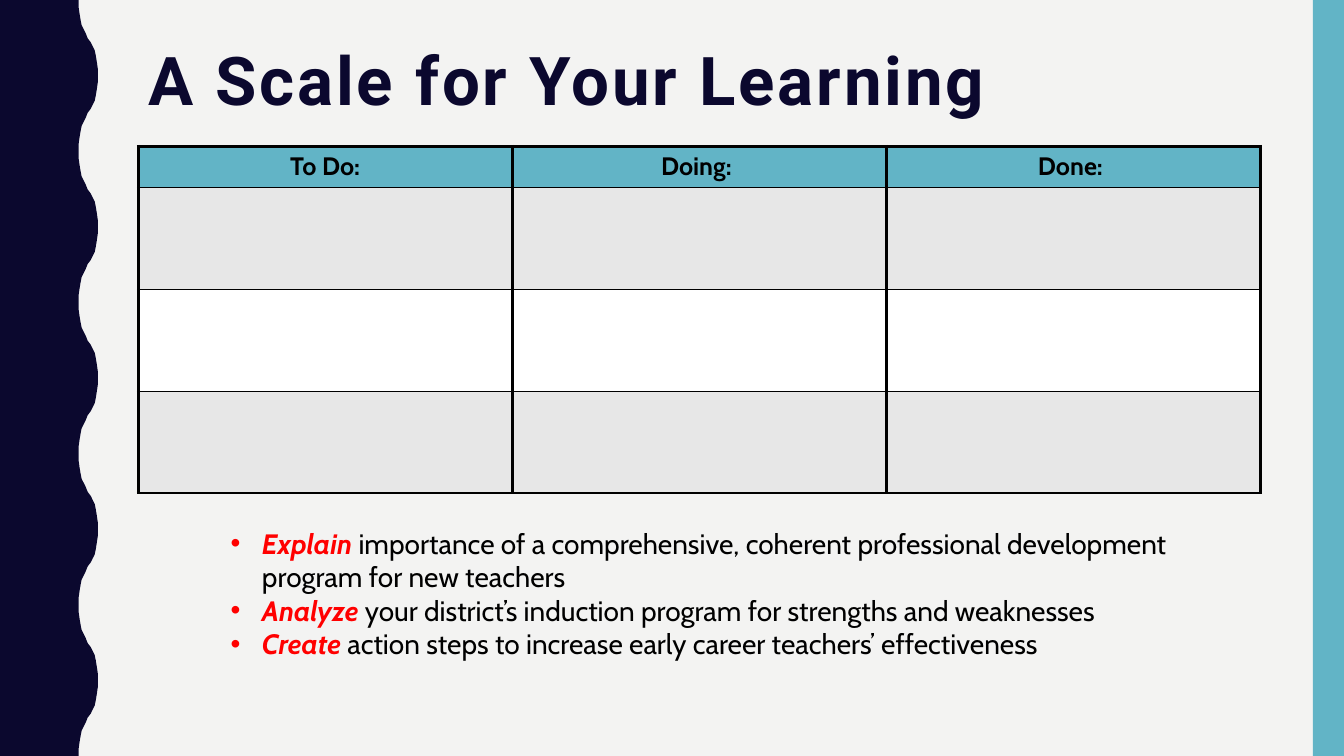
from lxml import etree
from pptx import Presentation
from pptx.dml.color import RGBColor
from pptx.enum.shapes import MSO_SHAPE
from pptx.enum.text import MSO_ANCHOR, PP_ALIGN
from pptx.oxml.ns import qn
from pptx.util import Inches, Pt

RECTANGLE = MSO_SHAPE.RECTANGLE
MIDDLE, TOP = MSO_ANCHOR.MIDDLE, MSO_ANCHOR.TOP
CENTER = PP_ALIGN.CENTER

SLIDE_W, SLIDE_H = 13.33, 7.5
LEFT, CONTENT_W = 1.37, 11.13
NAVY, TEAL, PAPER = "0B082E", "62B4C6", "F3F3F2"
BLACK, WHITE, GRAY, RED = "000000", "FFFFFF", "E7E7E7", "FF0000"

WAVES = 5
# First quarter of one wave as (x, y); the rest follows by symmetry.
WAVE_QUARTER = [(0.78, 0), (0.78, 0.07), (0.79, 0.14), (0.8, 0.2),
                (0.81, 0.25), (0.83, 0.29), (0.85, 0.33), (0.87, 0.38)]

HEADINGS = ["To Do:", "Doing: ", "Done: "]
HEADER_H, BODY_H = 0.41, 1.01
BODY_FILLS = [GRAY, WHITE, GRAY]
SIDE_LINE = 2.25
ROW_LINES = [2.25, 1, 0.25, 0.25, 2]

GOALS = [
    ("Explain ", "importance of a comprehensive, coherent professional "
                 "development program for new teachers"),
    ("Analyze ", "your district’s induction program for strengths and weaknesses"),
    ("Create ", "action steps to increase early career teachers’ effectiveness"),
]


def color(value):
    return RGBColor.from_string(value)


def paint(part, value):
    part.fill.solid()
    part.fill.fore_color.rgb = color(value)


def finish_shape(shape, value):
    """Flat fill without outline or shadow."""
    paint(shape, value)
    shape.line.fill.background()
    shape.shadow.inherit = False


def style_run(run, font_name, size, value, bold=False, italic=False):
    font = run.font
    font.name, font.size = font_name, Pt(size)
    font.bold, font.italic = bold, italic
    font.color.rgb = color(value)


def add_frame(slide, left, top, width, height):
    box = slide.shapes.add_textbox(*map(Inches, (left, top, width, height)))
    frame = box.text_frame
    frame.word_wrap = True
    frame.vertical_anchor = TOP
    return frame


def add_wavy_edge(slide):
    period = SLIDE_H / WAVES
    middle = 0.78 + 0.97
    half = WAVE_QUARTER + [(middle - x, period / 2 - y)
                           for x, y in reversed(WAVE_QUARTER[:-1])]
    wave = half + [(x, period - y) for x, y in reversed(half[:-1])]
    edge = [(x, y + i * period) for i in range(WAVES) for x, y in wave]
    outline = [(Inches(x), Inches(y)) for x, y in edge + [(0, SLIDE_H)]]
    builder = slide.shapes.build_freeform(0, 0)
    builder.add_line_segments(outline, close=True)
    finish_shape(builder.convert_to_shape(), NAVY)


def add_side_band(slide):
    width = 0.31
    band = slide.shapes.add_shape(RECTANGLE, Inches(SLIDE_W - width), 0,
                                  Inches(width), Inches(SLIDE_H))
    finish_shape(band, TEAL)


def add_title(slide, text):
    frame = add_frame(slide, LEFT, 0.42, CONTENT_W, 1)
    paragraph = frame.paragraphs[0]
    paragraph.text = text
    paragraph.line_spacing = 0.9
    run = paragraph.runs[0]
    style_run(run, "Roboto", 48, NAVY, bold=True)
    run.font._element.set("spc", "200")


def set_borders(cell, top, bottom):
    """Draw the cell's four sides; they must precede its fill in the XML."""
    properties = cell._tc.get_or_add_tcPr()
    sides = [("L", SIDE_LINE), ("R", SIDE_LINE), ("T", top), ("B", bottom)]
    for index, (side, width) in enumerate(sides):
        line = etree.Element(qn(f"a:ln{side}"), w=str(Pt(width)))
        fill = etree.SubElement(line, qn("a:solidFill"))
        etree.SubElement(fill, qn("a:srgbClr"), val=BLACK)
        properties.insert(index, line)


def add_scale_table(slide):
    heights = [HEADER_H] + [BODY_H] * len(BODY_FILLS)
    table = slide.shapes.add_table(
        len(heights), len(HEADINGS), Inches(LEFT), Inches(1.45),
        Inches(CONTENT_W), Inches(sum(heights))).table
    table.first_row = table.horz_banding = False
    for r, (height, fill) in enumerate(zip(heights, [TEAL] + BODY_FILLS)):
        table.rows[r].height = Inches(height)
        for cell in table.rows[r].cells:
            paint(cell, fill)
            set_borders(cell, ROW_LINES[r], ROW_LINES[r + 1])
    for cell, heading in zip(table.rows[0].cells, HEADINGS):
        cell.vertical_anchor = MIDDLE
        paragraph = cell.text_frame.paragraphs[0]
        paragraph.text = heading
        paragraph.alignment = CENTER
        style_run(paragraph.runs[0], "Cabin", 18, BLACK, bold=True)


def add_bullet(paragraph, value):
    properties = paragraph._p.get_or_add_pPr()
    indent = Inches(0.31)
    properties.set("marL", str(indent))
    properties.set("indent", str(-indent))
    bullet_color = etree.SubElement(properties, qn("a:buClr"))
    etree.SubElement(bullet_color, qn("a:srgbClr"), val=value)
    etree.SubElement(properties, qn("a:buFont"), typeface="Arial")
    etree.SubElement(properties, qn("a:buChar"), char="•")


def add_goals(slide):
    frame = add_frame(slide, 2.19, 5.17, 9.49, 1.45)
    for i, (verb, goal) in enumerate(GOALS):
        paragraph = frame.add_paragraph() if i else frame.paragraphs[0]
        add_bullet(paragraph, RED)
        paragraph.text = verb
        style_run(paragraph.runs[0], "Cabin", 20, RED, bold=True, italic=True)
        goal_run = paragraph.add_run()
        goal_run.text = goal
        style_run(goal_run, "Cabin", 20, BLACK)


def main():
    deck = Presentation()
    deck.slide_width, deck.slide_height = Inches(SLIDE_W), Inches(SLIDE_H)
    slide = deck.slides.add_slide(deck.slide_layouts[6])
    paint(slide.background, PAPER)
    add_wavy_edge(slide)
    add_side_band(slide)
    add_title(slide, "A Scale for Your Learning")
    add_scale_table(slide)
    add_goals(slide)
    deck.save("out.pptx")


if __name__ == "__main__":
    main()
